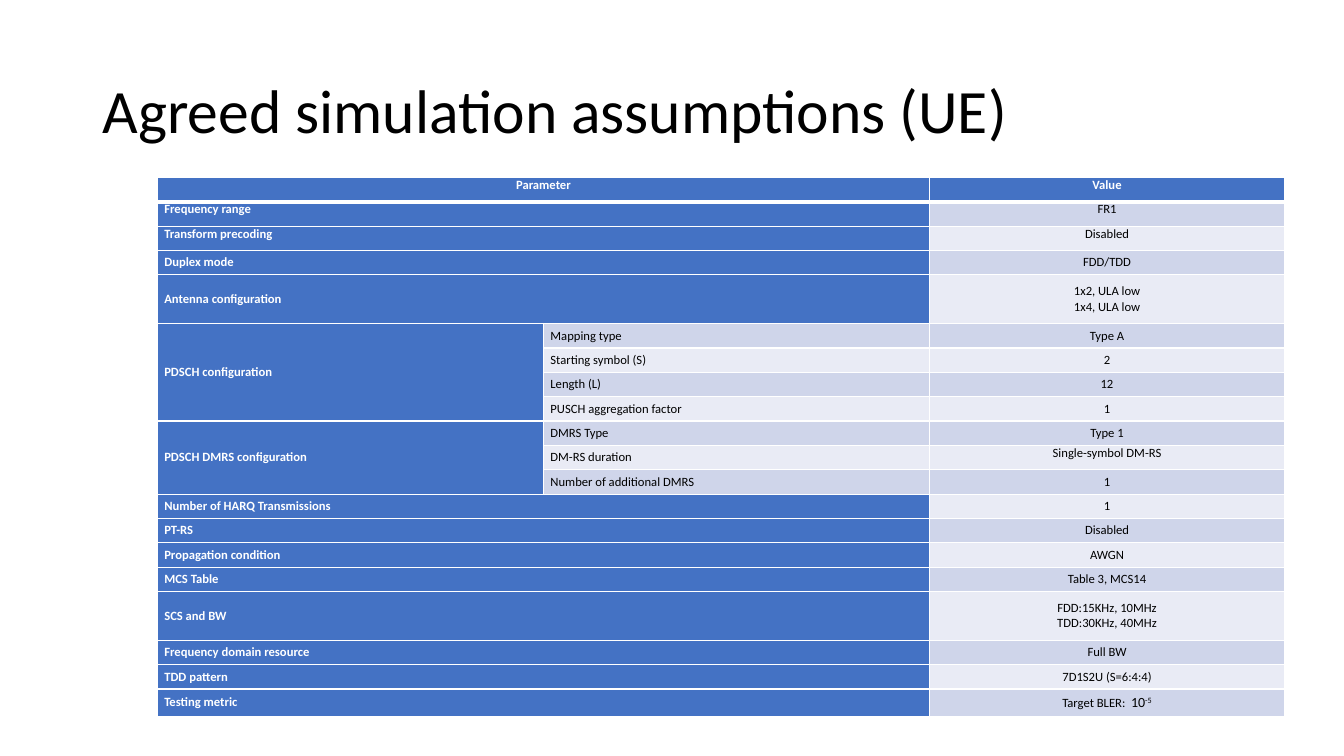
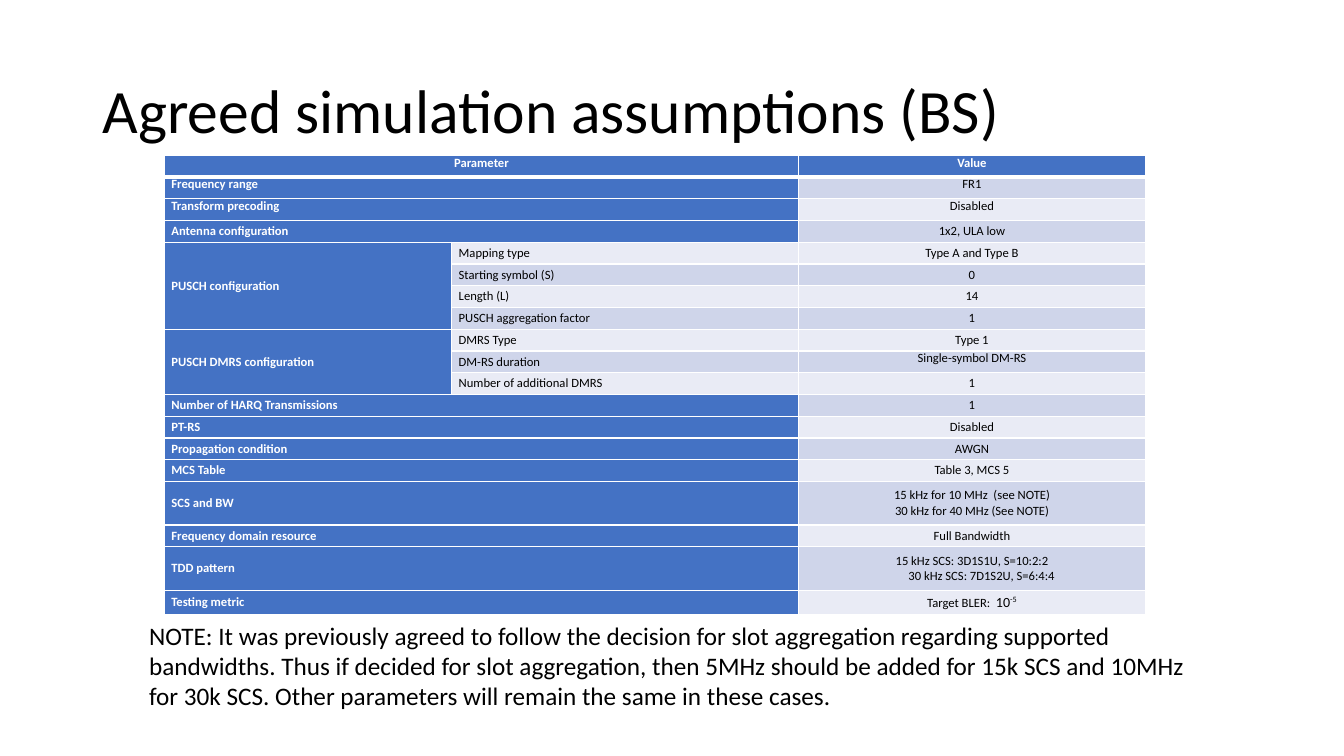
from dataclasses import dataclass

from lxml import etree
from pptx import Presentation
from pptx.dml.color import RGBColor as Rgb
from pptx.enum.text import MSO_ANCHOR as Anchor, PP_ALIGN as Align
from pptx.oxml.ns import qn
from pptx.util import Inches, Pt


@dataclass(frozen=True)
class Theme:
    font: str = "Calibri"
    text: str = "000000"
    light: str = "FFFFFF"
    accent: str = "4472C4"
    bands: tuple = ("E9EBF5", "CFD5EA")  # even rows, odd rows
    title_size: int = 44
    note_size: int = 18
    cell_size: int = 9
    target_size: int = 10
    border: int = 1
    header_border: int = 3


# (group, parameter, value on both slides); None is filled in per slide
PARAMETERS = [
    (None, "Frequency range", "FR1"),
    (None, "Transform precoding", "Disabled"),
    (None, "Duplex mode", None),
    (None, "Antenna configuration", None),
    ("configuration", "Mapping type", None),
    ("configuration", "Starting symbol (S)", None),
    ("configuration", "Length (L)", None),
    ("configuration", "PUSCH aggregation factor", "1"),
    ("DMRS configuration", "DMRS Type", "Type 1"),
    ("DMRS configuration", "DM-RS duration", "Single-symbol DM-RS"),
    ("DMRS configuration", "Number of additional DMRS", "1"),
    (None, "Number of HARQ Transmissions", "1"),
    (None, "PT-RS", "Disabled"),
    (None, "Propagation condition", "AWGN"),
    (None, "MCS Table", None),
    (None, "SCS and BW", None),
    (None, "Frequency domain resource", None),
    (None, "TDD pattern", None),
    (None, "Testing metric", "Target BLER:  "),
]
TOP_ANCHORED = {"Parameter", "Frequency range", "Transform precoding", "DM-RS duration"}

UE_VALUES = {
    "Duplex mode": "FDD/TDD",
    "Antenna configuration": "1x2, ULA low\n1x4, ULA low",
    "Mapping type": "Type A",
    "Starting symbol (S)": "2",
    "Length (L)": "12",
    "MCS Table": "Table 3, MCS14",
    "SCS and BW": "FDD:15KHz, 10MHz\nTDD:30KHz, 40MHz",
    "Frequency domain resource": "Full BW",
    "TDD pattern": "7D1S2U (S=6:4:4)",
}
BS_VALUES = {
    "Antenna configuration": "1x2, ULA low",
    "Mapping type": "Type A and Type B",
    "Starting symbol (S)": "0",
    "Length (L)": "14",
    "MCS Table": "Table 3, MCS 5",
    "SCS and BW": "15 kHz for 10 MHz  (see NOTE)\n30 kHz for 40 MHz (See NOTE)",
    "Frequency domain resource": "Full Bandwidth",
    "TDD pattern": "15 kHz SCS: 3D1S1U, S=10:2:2\n30 kHz SCS: 7D1S2U, S=6:4:4",
}
NOTE = (
    "NOTE: It was previously agreed to follow the decision for slot aggregation "
    "regarding supported bandwidths. Thus if decided for slot aggregation, then 5MHz "
    "should be added for 15k SCS and 10MHz for 30k SCS. Other parameters will remain "
    "the same in these cases."
)


def assumption_rows(channel, own_values):
    """Rows of (group, parameter, value) for one channel."""
    rows = [(None, "Parameter", "Value")]
    for group, parameter, shared in PARAMETERS:
        value = own_values.get(parameter, shared)
        if value:
            rows.append((group and f"{channel} {group}", parameter, value))
    return rows


class DeckBuilder:
    def __init__(self, theme):
        self.theme = theme
        self.deck = Presentation()
        self.deck.slide_width, self.deck.slide_height = Inches(13.33), Inches(7.5)
        self.page = None

    def new_page(self, title):
        self.page = self.deck.slides.add_slide(self.deck.slide_layouts[6])
        para = self.text_box(title, (0.92, 0.4, 11.5, 1.45), self.theme.title_size, Anchor.MIDDLE)
        para.line_spacing = 0.9

    def style_span(self, span, size, color, bold=False):
        formats = {"name": self.theme.font, "size": Pt(size), "bold": bold}
        for name, value in formats.items():
            setattr(span.font, name, value)
        span.font.color.rgb = Rgb.from_string(color)

    def text_box(self, text, place, size, anchor=Anchor.TOP):
        frame = self.page.shapes.add_textbox(*map(Inches, place)).text_frame
        frame.word_wrap, frame.vertical_anchor = True, anchor
        para = frame.paragraphs[0]
        para.text = text
        self.style_span(para.runs[0], size, self.theme.text)
        return para

    def borders(self, cell, top, bottom):
        props = cell._tc.get_or_add_tcPr()
        widths = {"L": self.theme.border, "R": self.theme.border, "T": top, "B": bottom}
        for side, width in widths.items():
            line = etree.SubElement(props, qn(f"a:ln{side}"), w=str(Pt(width)))
            fill = etree.SubElement(line, qn("a:solidFill"))
            etree.SubElement(fill, qn("a:srgbClr"), val=self.theme.light)

    def write_cell(self, cell, text, color, align, anchor, bold):
        formats = {"margin_left": Inches(0.07), "margin_right": Inches(0.07),
                   "margin_top": 0, "margin_bottom": 0, "vertical_anchor": anchor}
        for name, value in formats.items():
            setattr(cell, name, value)
        cell.text = text
        for para in cell.text_frame.paragraphs:
            para.alignment = align
            for span in para.runs:
                self.style_span(span, self.theme.cell_size, color, bold)

    def add_target(self, cell):
        para = cell.text_frame.paragraphs[0]
        for text, baseline in (("10", 0), ("-5", 30000)):
            span = para.add_run()
            span.text = text
            self.style_span(span, self.theme.target_size, self.theme.text)
            if baseline:
                span.font._element.set("baseline", str(baseline))

    def hang_first_line(self, cell):
        for number, para in enumerate(cell.text_frame.paragraphs):
            props = para._p.get_or_add_pPr()
            props.set("marL", str(Inches(0.19)))
            props.set("indent", str(0 if number else -Inches(0.19)))

    def assumption_table(self, rows, left, top, widths, height, last_height):
        theme = self.theme
        table = self.page.shapes.add_table(
            len(rows), 3, Inches(left), Inches(top), Inches(sum(widths)), Inches(height)).table
        for column, width in zip(table.columns, widths):
            column.width = Inches(width)

        # Row height follows the number of lines; the last row is a little taller
        lines = [value.count("\n") + 1 for _, _, value in rows]
        unit = (height - last_height) / sum(lines[:-1])
        for row, count in zip(table.rows, lines):
            row.height = Inches(unit * count)
        table.rows[len(rows) - 1].height = Inches(last_height)

        group_starts = {}
        for index, (group, parameter, value) in enumerate(rows):
            cells = [table.cell(index, column) for column in range(3)]
            header = index == 0
            band = theme.accent if header else theme.bands[index % 2]
            fills = (theme.accent, band if group else theme.accent, band)
            for cell, fill in zip(cells, fills):
                self.borders(cell, theme.header_border if index == 1 else theme.border,
                             theme.header_border if header else theme.border)
                cell.fill.solid()
                cell.fill.fore_color.rgb = Rgb.from_string(fill)

            anchor = Anchor.TOP if parameter in TOP_ANCHORED else Anchor.MIDDLE
            if group:
                group_starts.setdefault(group, []).append(index)
                self.write_cell(cells[1], parameter, theme.text, Align.LEFT, Anchor.MIDDLE, False)
            else:
                cells[0].merge(cells[1])
                self.write_cell(cells[0], parameter, theme.light,
                                Align.CENTER if header else Align.LEFT, anchor, True)
            self.write_cell(cells[2], value, theme.light if header else theme.text,
                            Align.CENTER, anchor, header)
            if parameter == "Testing metric":
                self.add_target(cells[2])
            if parameter == "TDD pattern" and lines[index] > 1:
                self.hang_first_line(cells[2])

        # Group labels span their rows
        for group, members in group_starts.items():
            cell = table.cell(members[0], 0)
            cell.merge(table.cell(members[-1], 0))
            self.write_cell(cell, group, theme.light, Align.LEFT, Anchor.MIDDLE, True)


def main():
    theme = Theme()
    builder = DeckBuilder(theme)

    # User equipment
    builder.new_page("Agreed simulation assumptions (UE)")
    builder.assumption_table(assumption_rows("PDSCH", UE_VALUES), 1.56, 1.76,
                             (3.83, 3.83, 3.52), 5.35, 0.27)

    # Base station
    builder.new_page("Agreed simulation assumptions (BS)")
    builder.assumption_table(assumption_rows("PUSCH", BS_VALUES), 1.63, 1.54,
                             (2.85, 3.44, 3.44), 4.56, 0.24)
    builder.text_box(NOTE, (1.38, 6.1, 10.58, 1.01), theme.note_size)

    builder.deck.save("out.pptx")


if __name__ == "__main__":
    main()
